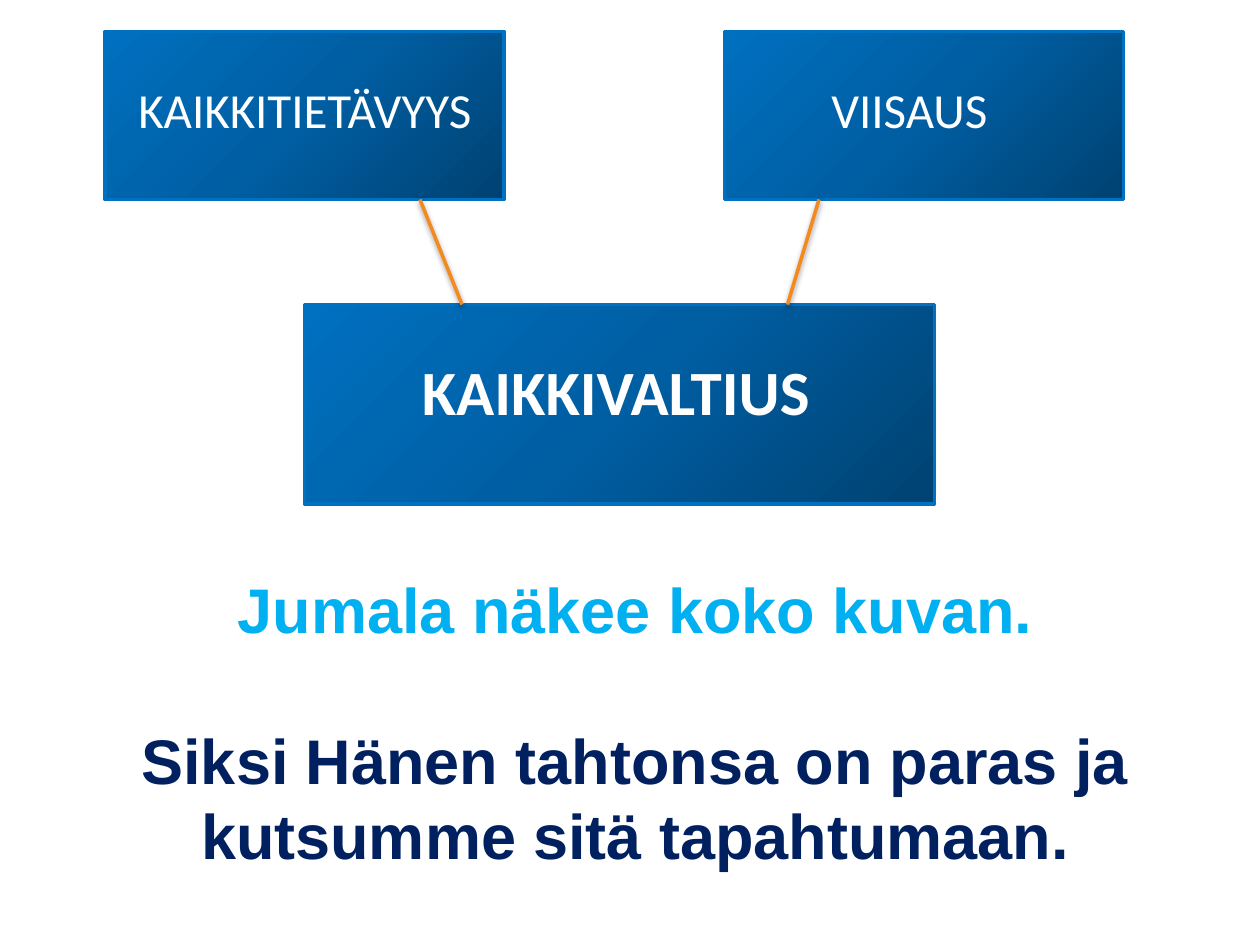
from lxml.etree import SubElement
from pptx import Presentation
from pptx.dml.color import RGBColor
from pptx.enum.shapes import MSO_CONNECTOR, MSO_SHAPE
from pptx.enum.text import MSO_ANCHOR, PP_ALIGN
from pptx.oxml import parse_xml
from pptx.oxml.ns import nsdecls, qn
from pptx.util import Pt

PX = 7620  # EMU in one px, 120 px to the inch

COLORS = {
    "dark": "004272", "mid": "005EA2", "blue": "0070C0", "white": "FFFFFF",
    "orange": "F4891E", "sky": "00B0F0", "navy": "002060", "black": "000000",
}

# box rectangle, label, label rectangle, text size, bold
BOXES = [
    ((290, 290, 600, 190), "KAIKKIVALTIUS", (390, 330, 410, 85), 36, True),
    ((100, 30, 380, 160), "KAIKKITIETÄVYYS", (120, 70, 410, 68), 28, False),
    ((690, 30, 380, 160), "VIISAUS", (780, 70, 210, 68), 28, False),
]
LINKS = [(400, 190, 440, 290), (780, 190, 750, 290)]
MESSAGE = [
    ("Jumala näkee koko kuvan.", "sky"),
    ("Siksi Hänen tahtonsa on paras ja kutsumme sitä tapahtumaan.", "navy"),
]
MESSAGE_AT = (40, 536, 1130, 302)


def emu(rect):
    return [n * PX for n in rect]


def rgb(name):
    return RGBColor.from_string(COLORS[name])


def style(font, name, size, color, bold):
    font.name, font.size, font.bold = name, Pt(size), bold
    font.color.rgb = rgb(color)


def shade(shape):
    """Fill with a radial gradient, darkest at the bottom right corner."""
    shape.fill.gradient()
    grad = shape._element.spPr.find(qn("a:gradFill"))
    stops = "".join(
        f'<a:gs pos="{pos}"><a:srgbClr val="{COLORS[name]}"/></a:gs>'
        for pos, name in [(0, "dark"), (50000, "mid"), (100000, "blue")])
    new = parse_xml(
        f'<a:gradFill {nsdecls("a")} rotWithShape="1"><a:gsLst>{stops}</a:gsLst>'
        '<a:path path="circle"><a:fillToRect l="100000" t="100000"/></a:path>'
        '<a:tileRect r="-100000" b="-100000"/></a:gradFill>')
    grad.getparent().replace(grad, new)


def add_box(shapes, rect):
    box = shapes.add_shape(MSO_SHAPE.RECTANGLE, *emu(rect))
    box.shadow.inherit = False
    shade(box)
    box.line.color.rgb = rgb("blue")
    box.line.width = Pt(2)


def add_label(shapes, text, rect, size, bold):
    frame = shapes.add_textbox(*emu(rect)).text_frame
    frame.word_wrap = True
    frame.text = text
    style(frame.paragraphs[0].runs[0].font, "Calibri", size, "white", bold)


def add_link(shapes, ends):
    link = shapes.add_connector(MSO_CONNECTOR.STRAIGHT, *emu(ends))
    link.line.color.rgb = rgb("orange")
    link.line.width = Pt(2)
    effects = SubElement(link._element.spPr, qn("a:effectLst"))
    shadow = SubElement(effects, qn("a:outerShdw"), blurRad="40000",
                        dist="20000", dir="5400000", rotWithShape="0")
    color = SubElement(shadow, qn("a:srgbClr"), val=COLORS["black"])
    SubElement(color, qn("a:alpha"), val="38000")


def add_message(shapes):
    frame = shapes.add_textbox(*emu(MESSAGE_AT)).text_frame
    frame.word_wrap = True
    frame.vertical_anchor = MSO_ANCHOR.MIDDLE
    frame.text = "\n".join(text for text, _ in MESSAGE)
    for i, (para, (_, color)) in enumerate(zip(frame.paragraphs, MESSAGE)):
        para.alignment = PP_ALIGN.CENTER
        if i:
            para.space_before = Pt(43)
        style(para.runs[0].font, "Arial", 36, color, True)


def main():
    deck = Presentation()
    deck.slide_width, deck.slide_height = emu((1200, 900))
    shapes = deck.slides.add_slide(deck.slide_layouts[6]).shapes
    add_message(shapes)
    for rect, *_ in BOXES:
        add_box(shapes, rect)
    for _, *label in BOXES:
        add_label(shapes, *label)
    for ends in LINKS:
        add_link(shapes, ends)
    deck.save("out.pptx")


if __name__ == "__main__":
    main()
